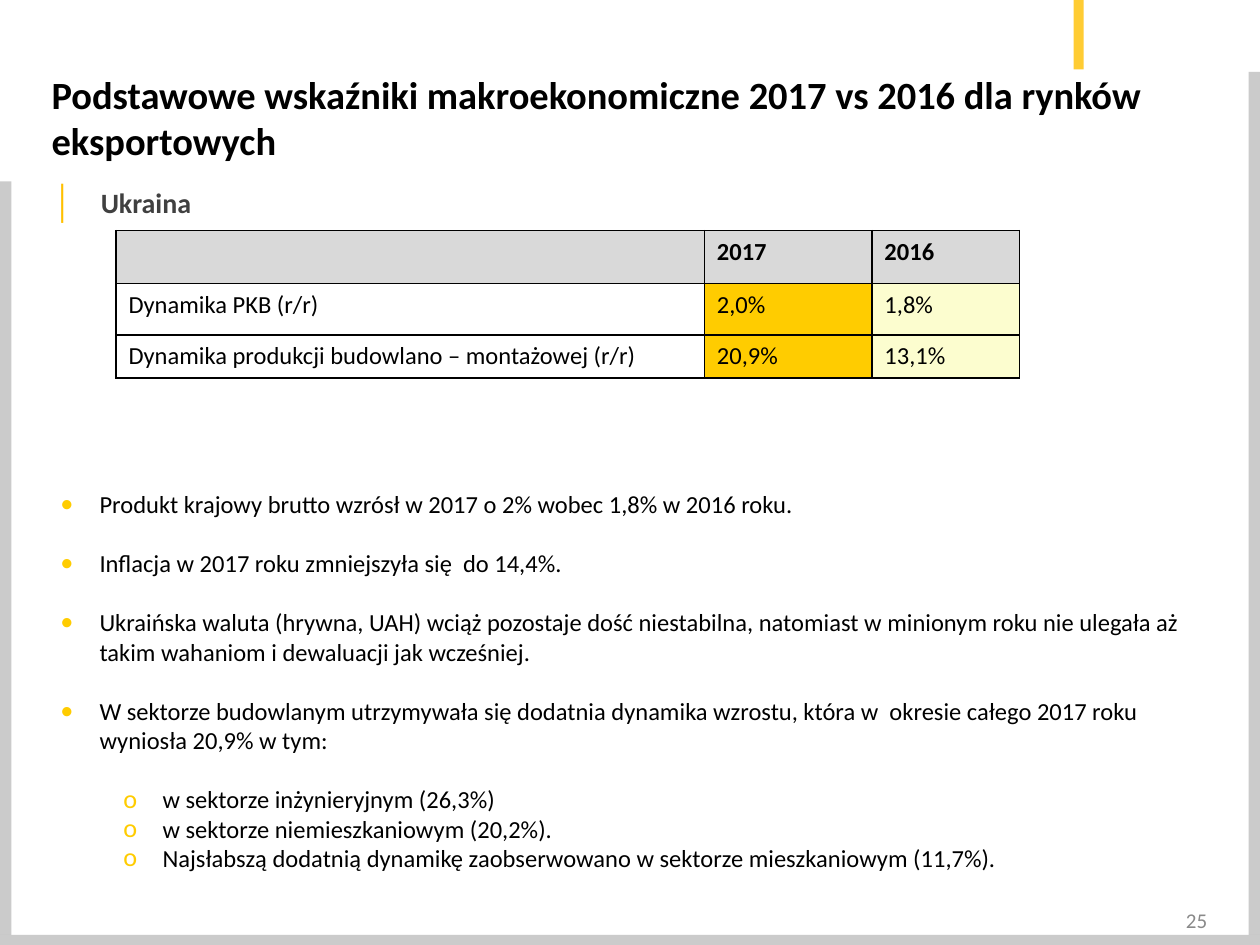
import pptx
import pptx.dml.color
import pptx.enum.shapes
import pptx.enum.text
import pptx.oxml
import pptx.util
from pptx.util import Inches

FONT = "Calibri"
BLACK = "000000"
GOLD = "FFCC00"
AMBER = "FFC000"
NS = 'xmlns:a="http://schemas.openxmlformats.org/drawingml/2006/main"'
ALIGN = pptx.enum.text.PP_ALIGN
ANCHOR = pptx.enum.text.MSO_ANCHOR

HEADING = "Podstawowe wskaźniki makroekonomiczne 2017 vs 2016 dla rynków eksportowych"
INDICATORS = [
    ("", "2017", "2016"),
    ("Dynamika PKB (r/r)", "2,0%", "1,8%"),
    ("Dynamika produkcji budowlano – montażowej (r/r)", "20,9%", "13,1%"),
]
# Level, space before in points, text
COMMENTS = [
    (0, 0, "Produkt krajowy brutto wzrósł w 2017 o 2% wobec 1,8% w 2016 roku."),
    (0, 17, "Inflacja w 2017 roku zmniejszyła się  do 14,4%."),
    (0, 17, "Ukraińska waluta (hrywna, UAH) wciąż pozostaje dość niestabilna, natomiast "
            "w minionym roku nie ulegała aż takim wahaniom i dewaluacji jak wcześniej."),
    (0, 17, "W sektorze budowlanym utrzymywała się dodatnia dynamika wzrostu, która w  "
            "okresie całego 2017 roku  wyniosła 20,9% w tym:"),
    (1, 17, "w sektorze inżynieryjnym (26,3%)"),
    (1, 0, "w sektorze niemieszkaniowym (20,2%)."),
    (1, 0, "Najsłabszą dodatnią dynamikę zaobserwowano w sektorze mieszkaniowym (11,7%)."),
]


def rgb(value):
    return pptx.dml.color.RGBColor.from_string(value)


def apply(target, **values):
    for name, value in values.items():
        setattr(target, name, value)


def place(holder, box):
    """Move a text holder to its box and keep its text size fixed."""
    apply(holder, **dict(zip(("left", "top", "width", "height"), map(Inches, box))))
    apply(holder.text_frame, word_wrap=True,
          auto_size=pptx.enum.text.MSO_AUTO_SIZE.NONE)
    return holder.text_frame


def write(paragraph, text, size, color=BLACK, bold=False, align=ALIGN.LEFT, before=0):
    paragraph.text = text
    apply(paragraph, alignment=align, space_before=pptx.util.Pt(before))
    apply(paragraph.font, name=FONT, size=pptx.util.Pt(size), bold=bold)
    paragraph.font.color.rgb = rgb(color)


def add_bullet(paragraph, mark, color, percent, margin, hanging):
    properties = paragraph._p.get_or_add_pPr()
    properties.set("marL", str(Inches(margin)))
    properties.set("indent", str(-Inches(hanging)))
    for element in (f'<a:buClr {NS}><a:srgbClr val="{color}"/></a:buClr>',
                    f'<a:buSzPct {NS} val="{percent * 1000}"/>',
                    f'<a:buFont {NS} typeface="{FONT}"/>',
                    f'<a:buChar {NS} char="{mark}"/>'):
        properties.append(pptx.oxml.parse_xml(element))


def add_frame_bars(slide):
    """Translucent bars along the edges of the slide."""
    for color, box in (
        (AMBER, (8.52, 0, 0.08, 0.55)),
        ("BFBFBF", (9.91, 0.57, 0.09, 6.85)),
        ("BFBFBF", (0, 1.44, 0.09, 5.98)),
        ("BFBFBF", (0, 7.42, 10, 0.09)),
    ):
        bar = slide.shapes.add_shape(
            pptx.enum.shapes.MSO_SHAPE.RECTANGLE, *map(Inches, box))
        bar.shadow.inherit = False
        bar.line.fill.background()
        bar.fill.solid()
        bar.fill.fore_color.rgb = rgb(color)
        tint = bar._element.spPr.find(".//{*}srgbClr")
        tint.append(pptx.oxml.parse_xml(f'<a:alpha {NS} val="80000"/>'))


def fill_title(title, box):
    frame = place(title, box)
    frame.vertical_anchor = ANCHOR.MIDDLE
    write(frame.paragraphs[0], HEADING, 22, bold=True)


def fill_country(country, box):
    paragraph = place(country, box).paragraphs[0]
    add_bullet(paragraph, "│", AMBER, 135, 0.38, 0.38)
    write(paragraph, "Ukraina", 16, "404040", bold=True)


def fill_comments(comments, box):
    frame = place(comments, box)
    frame.vertical_anchor = ANCHOR.TOP
    for number, (level, before, text) in enumerate(COMMENTS):
        paragraph = frame.add_paragraph() if number else frame.paragraphs[0]
        paragraph.level = level
        add_bullet(paragraph, "•o"[level], GOLD, 107, 0.31 + 0.5 * level, 0.31)
        write(paragraph, text, 14, before=before)


def add_borders(cell):
    for side in "LRTB":
        cell._tc.get_or_add_tcPr().append(pptx.oxml.parse_xml(
            f'<a:ln{side} {NS} w="12700"><a:solidFill><a:srgbClr val="{BLACK}"/>'
            f'</a:solidFill></a:ln{side}>'))


def add_indicators(slide, box):
    table = slide.shapes.add_table(
        len(INDICATORS), len(INDICATORS[0]), *map(Inches, box)).table
    for column, width in zip(table.columns, (4.67, 1.33, 1.17)):
        column.width = Inches(width)
    for row, height in zip(table.rows, (0.42, 0.41, 0.34)):
        row.height = Inches(height)
    column_fills = ("FFFFFF", GOLD, "FCFDCF")
    for r, values in enumerate(INDICATORS):
        for c, value in enumerate(values):
            cell = table.cell(r, c)
            add_borders(cell)
            cell.fill.solid()
            cell.fill.fore_color.rgb = rgb(column_fills[c] if r else "D9D9D9")
            write(cell.text_frame.paragraphs[0], value, 14, bold=r == 0)


def add_page_number(slide, box):
    frame = place(slide.shapes.add_textbox(*map(Inches, box)), box)
    frame.vertical_anchor = ANCHOR.MIDDLE
    write(frame.paragraphs[0], "25", 12, "898989", align=ALIGN.RIGHT)


def main():
    presentation = pptx.Presentation()
    apply(presentation, slide_width=Inches(10), slide_height=Inches(7.5))
    slide = presentation.slides.add_slide(
        presentation.slide_layouts.get_by_name("Two Content"))
    title, country, comments = slide.placeholders
    add_frame_bars(slide)
    fill_title(title, (0.31, 0.62, 9.38, 0.62))
    fill_country(country, (0.32, 1.42, 9.38, 0.39))
    add_indicators(slide, (0.92, 1.83, 7.17, 1.17))
    fill_comments(comments, (0.38, 3.83, 9.33, 3.16))
    add_page_number(slide, (7.35, 7.18, 2.33, 0.24))
    presentation.save("out.pptx")


if __name__ == "__main__":
    main()
